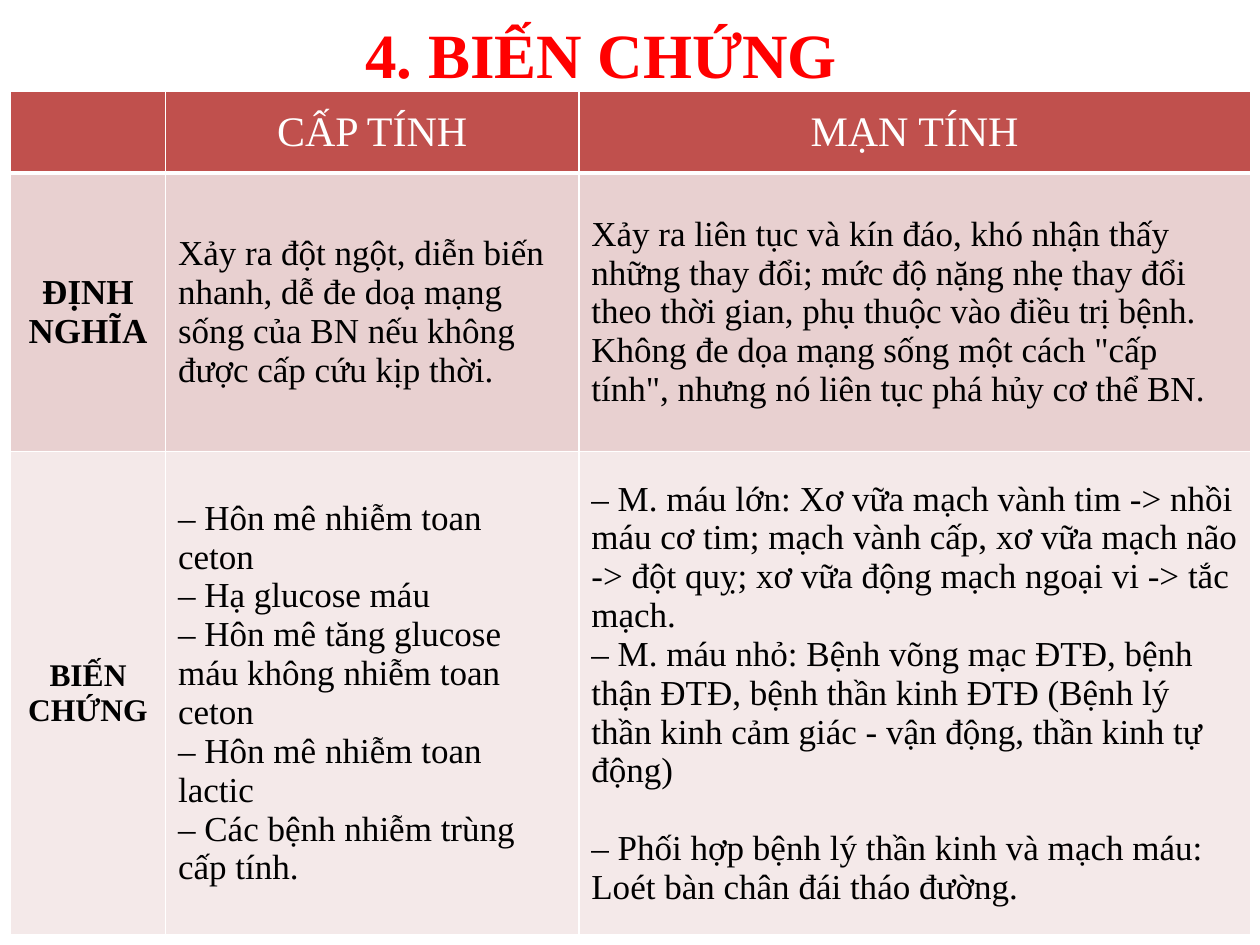
from lxml.etree import SubElement
from pptx import Presentation
from pptx.dml.color import RGBColor
from pptx.enum.text import MSO_ANCHOR, PP_ALIGN
from pptx.oxml.ns import qn
from pptx.util import Pt

FONT = "Times New Roman"
WHITE, BLACK, RED = "FFFFFF", "000000", "FF0000"
ROW_FILLS = ["C0504D", "E8D0D0", "F4E9E9"]
COLUMN_WIDTHS = [88.56, 236.16, 383.76]
ROW_HEIGHTS = [46.8, 159.12, 276.48]
PHASES = ["CẤP TÍNH", "MẠN TÍNH"]
DEFINITIONS = [
    "Xảy ra đột ngột, diễn biến nhanh, dễ đe doạ mạng sống của BN nếu không được cấp cứu kịp thời.",
    "Xảy ra liên tục và kín đáo, khó nhận thấy những thay đổi; mức độ nặng nhẹ thay đổi theo thời gian, "
    "phụ thuộc vào điều trị bệnh. Không đe dọa mạng sống một cách \"cấp tính\", "
    "nhưng nó liên tục phá hủy cơ thể BN.",
]
ACUTE = [
    "‒ Hôn mê nhiễm toan ceton",
    "‒ Hạ glucose máu",
    "‒ Hôn mê tăng glucose máu không nhiễm toan ceton",
    "‒ Hôn mê nhiễm toan lactic",
    "‒ Các bệnh nhiễm trùng cấp tính.",
]
CHRONIC = [
    "‒ M. máu lớn: Xơ vữa mạch vành tim -> nhồi máu cơ tim; mạch vành cấp, xơ vữa mạch não -> đột quỵ; "
    "xơ vữa động mạch ngoại vi -> tắc mạch.",
    "‒ M. máu nhỏ: Bệnh võng mạc ĐTĐ, bệnh thận ĐTĐ, bệnh thần kinh ĐTĐ "
    "(Bệnh lý thần kinh cảm giác - vận động, thần kinh tự động)",
    "‒ Phối hợp bệnh lý thần kinh và mạch máu: Loét bàn chân đái tháo đường.",
]
ROWS = [
    [[""], *([phase] for phase in PHASES)],
    [["ĐỊNH NGHĨA"], *([definition] for definition in DEFINITIONS)],
    [["BIẾN CHỨNG"], ACUTE, CHRONIC],
]


def color(value):
    return RGBColor.from_string(value)


def write(frame, lines, size, ink, bold=False, align=PP_ALIGN.LEFT):
    frame.text = "\n".join(lines)
    for paragraph in frame.paragraphs:
        paragraph.alignment = align
        font = paragraph.font
        font.name, font.size, font.bold = FONT, Pt(size), bold
        font.color.rgb = color(ink)


def set_borders(cell, widths):
    properties = cell._tc.get_or_add_tcPr()
    for position, (side, width) in enumerate(widths.items()):
        line = properties.makeelement(qn(f"a:{side}"), {"w": str(Pt(width))})
        fill = SubElement(line, qn("a:solidFill"))
        SubElement(fill, qn("a:srgbClr"), val=WHITE)
        properties.insert(position, line)


def add_title(slide, left, top, width, height):
    title = slide.shapes.add_textbox(Pt(left), Pt(top), Pt(width), Pt(height)).text_frame
    title.word_wrap = True
    title.vertical_anchor = MSO_ANCHOR.MIDDLE
    write(title, ["4. BIẾN CHỨNG "], 36, RED, True, PP_ALIGN.CENTER)


def add_comparison(slide, left, top, width, height):
    table = slide.shapes.add_table(
        len(ROWS), len(COLUMN_WIDTHS), Pt(left), Pt(top), Pt(width), Pt(height)
    ).table
    for column, share in zip(table.columns, COLUMN_WIDTHS):
        column.width = Pt(width * share / sum(COLUMN_WIDTHS))
    for row, share in zip(table.rows, ROW_HEIGHTS):
        row.height = Pt(height * share / sum(ROW_HEIGHTS))
    for r, row in enumerate(ROWS):
        for c, lines in enumerate(row):
            cell = table.cell(r, c)
            cell.vertical_anchor = MSO_ANCHOR.MIDDLE
            cell.fill.solid()
            cell.fill.fore_color.rgb = color(ROW_FILLS[r])
            set_borders(cell, {
                "lnL": 1, "lnR": 1,
                "lnT": 3 if r == 1 else 1,
                "lnB": 3 if r == 0 else 1,
            })
            is_header, is_label = r == 0, c == 0
            size = 24 if is_header else 18 if is_label and r == 2 else 20
            write(
                cell.text_frame, lines, size,
                WHITE if is_header else BLACK,
                is_label and not is_header,
                PP_ALIGN.CENTER if is_header or is_label else PP_ALIGN.LEFT,
            )
    table.cell(2, 2).text_frame.paragraphs[-1].space_before = Pt(22)


def main():
    presentation = Presentation()
    presentation.slide_width, presentation.slide_height = Pt(720), Pt(540)
    slide = presentation.slides.add_slide(presentation.slide_layouts[6])
    add_comparison(slide, 6, 52, 708.48, 482.4)
    add_title(slide, 42, 3.6, 612, 54)
    presentation.save("out.pptx")


if __name__ == "__main__":
    main()
